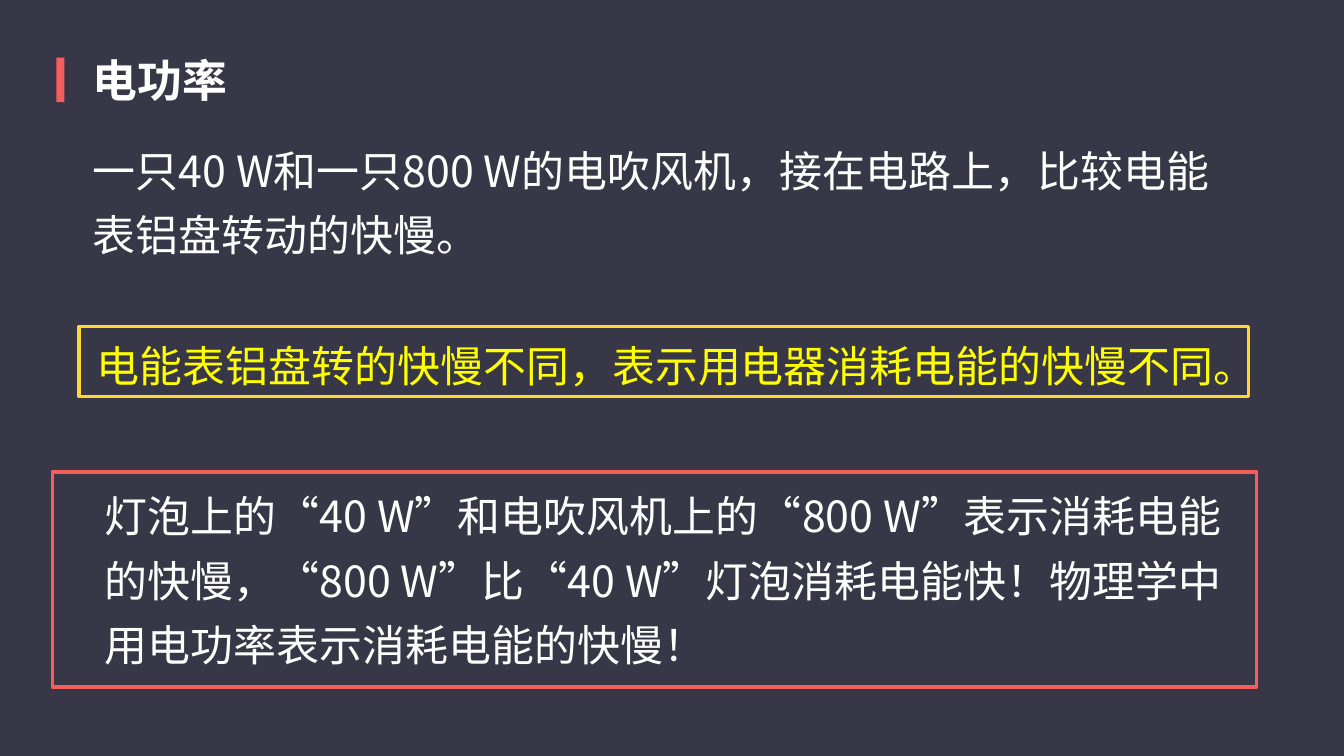
import pptx
import pptx.dml.color
import pptx.enum.shapes
import pptx.enum.text
import pptx.oxml
import pptx.oxml.ns
import pptx.util
from pptx.util import Inches

FONT = "Noto Sans CJK SC"
COLORS = {
    "background": "383747",
    "accent": "F65D5D",
    "text": "FFFFFF",
    "highlight": "FFFF00",
    "yellow_frame": "FFD732",
    "red_frame": "F65E5E",
}


def rgb(name):
    return pptx.dml.color.RGBColor.from_string(COLORS[name])


def write_text(s, text, size=23, color="text", bold=False):
    tf = s.text_frame
    tf.word_wrap = True
    tf.auto_size = pptx.enum.text.MSO_AUTO_SIZE.SHAPE_TO_FIT_TEXT
    tf.vertical_anchor = pptx.enum.text.MSO_ANCHOR.TOP
    tf.margin_left = tf.margin_right = tf.margin_top = tf.margin_bottom = 0
    p = tf.paragraphs[0]
    p.alignment = pptx.enum.text.PP_ALIGN.LEFT
    p.line_spacing = 1.25
    p.space_before = pptx.util.Pt(0)
    r = p.add_run()
    r.text = text
    r.font.name = FONT
    r.font.size = pptx.util.Pt(size)
    r.font.bold = bold
    r.font.color.rgb = rgb(color)
    ea = pptx.oxml.parse_xml(
        f'<a:ea {pptx.oxml.ns.nsdecls("a")} typeface="{FONT}"/>')
    r.font._element.find(pptx.oxml.ns.qn("a:latin")).addnext(ea)


def add_text(slide, left, top, width, height, text, **style):
    s = slide.shapes.add_textbox(
        Inches(left), Inches(top), Inches(width), Inches(height))
    write_text(s, text, **style)


def add_rect(slide, left, top, width, height, fill=None, line=None):
    s = slide.shapes.add_shape(
        pptx.enum.shapes.MSO_SHAPE.RECTANGLE,
        Inches(left), Inches(top), Inches(width), Inches(height))
    s.shadow.inherit = False
    if fill:
        s.fill.solid()
        s.fill.fore_color.rgb = rgb(fill)
    else:
        s.fill.background()
    if line:
        s.line.color.rgb = rgb(line)
        s.line.width = pptx.util.Pt(2)
    else:
        s.line.fill.background()


def add_heading(slide, left, top, width, height, text):
    add_rect(slide, left, top + 0.14, 0.06, 0.33, fill="accent")
    s = slide.shapes.title
    s.left, s.top = Inches(left + 0.27), Inches(top)
    s.width, s.height = Inches(width - 0.27), Inches(height)
    write_text(s, text, size=24, bold=True)


def add_framed_text(slide, left, top, width, height, text, frame,
                    inset, text_width, color="text"):
    dx, dy = inset
    add_text(slide, left + dx, top + dy, text_width, height - dy, text,
             color=color)
    add_rect(slide, left, top, width, height, line=frame)


def main():
    prs = pptx.Presentation()
    prs.slide_width = Inches(10)
    prs.slide_height = prs.slide_width * 9 // 16
    slide = prs.slides.add_slide(prs.slide_layouts[5])
    slide.background.fill.solid()
    slide.background.fill.fore_color.rgb = rgb("background")

    add_heading(slide, 0.42, 0.29, 9.57, 0.6, "电功率")
    add_text(slide, 0.69, 0.98, 8.59, 1.0,
             "一只40 W和一只800 W的电吹风机，接在电路上，比较电能表铝盘转动的快慢。")
    add_framed_text(slide, 0.59, 2.43, 8.7, 0.52,
                    "电能表铝盘转的快慢不同，表示用电器消耗电能的快慢不同。",
                    "yellow_frame", inset=(0.13, 0), text_width=8.48,
                    color="highlight")
    add_framed_text(slide, 0.39, 3.51, 8.96, 1.6,
                    "灯泡上的“40 W”和电吹风机上的“800 W”表示消耗电能的快慢，"
                    "“800 W”比“40 W”灯泡消耗电能快！"
                    "物理学中用电功率表示消耗电能的快慢！",
                    "red_frame", inset=(0.39, 0.04), text_width=8.4)
    prs.save("out.pptx")


if __name__ == "__main__":
    main()
